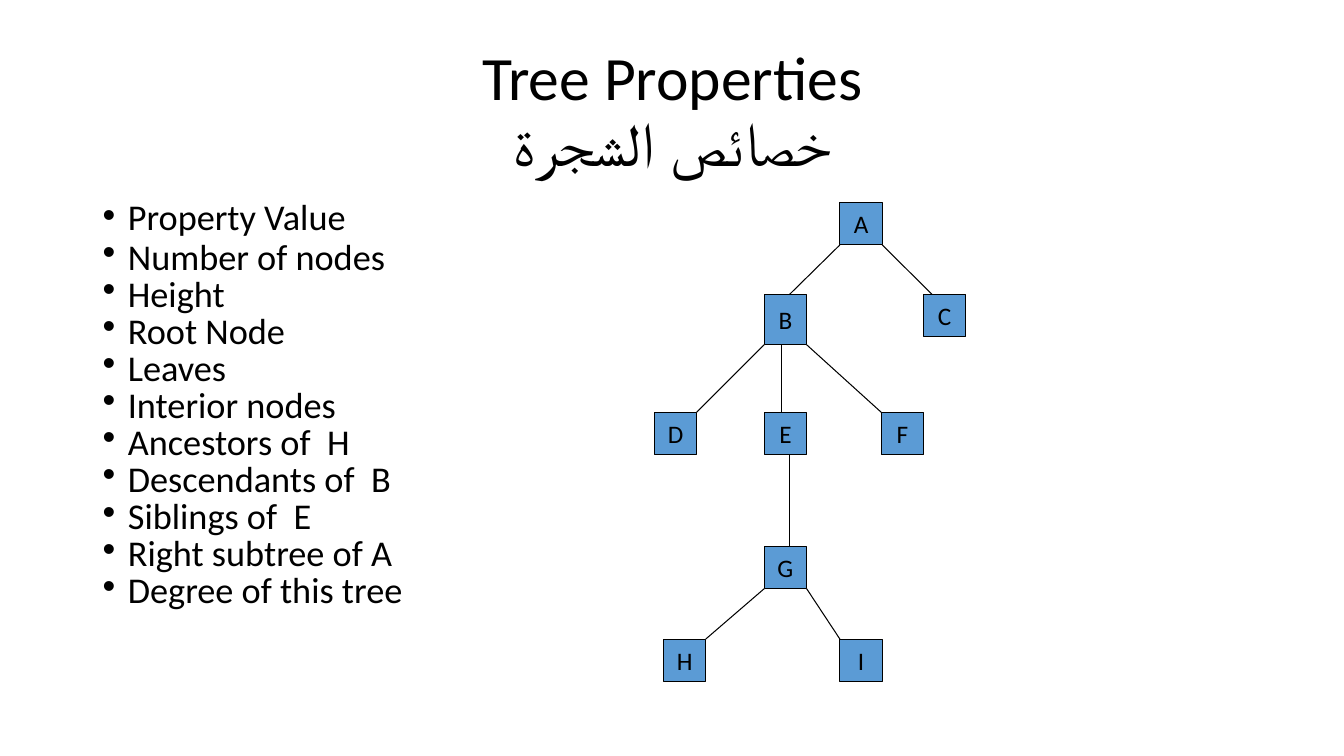
"""Build the tree properties slide."""
from dataclasses import dataclass

from lxml import etree
from pptx import Presentation
from pptx.dml.color import RGBColor
from pptx.enum import shapes, text
from pptx.oxml.ns import qn
from pptx.util import Inches, Pt

FONT = "Calibri"
BLACK = "000000"
NODE_BLUE = "5B9BD5"
SIDE = 0.42


@dataclass(frozen=True)
class Node:
    left: float
    top: float
    height: float = SIDE


@dataclass(frozen=True)
class Edge:
    parent: str
    child: str
    start: float
    end: float


NODES = {
    "A": Node(8.33, 2.01),
    "B": Node(7.58, 2.92, 0.5),
    "C": Node(9.16, 2.92),
    "D": Node(6.49, 4.09),
    "E": Node(7.58, 4.09),
    "F": Node(8.74, 4.09),
    "G": Node(7.58, 5.42),
    "H": Node(6.58, 6.34),
    "I": Node(8.33, 6.34),
}
EDGES = [
    Edge("A", "B", 0, 0.6),
    Edge("A", "C", 1, 0.2),
    Edge("B", "D", 0, 1),
    Edge("B", "E", 0.4, 0.4),
    Edge("B", "F", 1, 0),
    Edge("E", "G", 0.6, 0.6),
    Edge("G", "H", 0, 1),
    Edge("G", "I", 1, 0),
]
PROPERTIES = [
    "Property Value", "Number of nodes", "Height", "Root Node", "Leaves",
    "Interior nodes", "Ancestors of  H", "Descendants of  B",
    "Siblings of  E", "Right subtree of A", "Degree of this tree",
]


def color(value: str) -> RGBColor:
    return RGBColor.from_string(value)


def format_runs(paragraph, size: float) -> None:
    for run in paragraph.runs:
        run.font.name = FONT
        run.font.size = Pt(size)
        run.font.color.rgb = color(BLACK)


def add_bullet(paragraph) -> None:
    properties = paragraph._p.get_or_add_pPr()
    properties.set("marL", str(Inches(0.25)))
    properties.set("indent", str(Inches(-0.25)))
    etree.SubElement(properties, qn("a:buFont")).set("typeface", "Arial")
    etree.SubElement(properties, qn("a:buChar")).set("char", "•")


def draw_title(slide) -> None:
    title = slide.shapes.title
    title.left, title.top = Inches(0.92), Inches(0.4)
    title.width, title.height = Inches(11.5), Inches(1.45)
    frame = title.text_frame
    frame.text = "Tree Properties\vخصائص الشجرة"
    frame.auto_size = text.MSO_AUTO_SIZE.NONE
    frame.vertical_anchor = text.MSO_ANCHOR.MIDDLE
    heading = frame.paragraphs[0]
    heading.alignment = text.PP_ALIGN.CENTER
    heading.line_spacing = 0.9
    format_runs(heading, 44)


def draw_properties(slide) -> None:
    box = slide.shapes.add_textbox(Inches(0.92), Inches(2), Inches(11.5), Inches(4.76))
    frame = box.text_frame
    frame.word_wrap = True
    frame.text = "\n".join(PROPERTIES)
    for index, entry in enumerate(frame.paragraphs):
        entry.line_spacing = 0.4 if index else 0.7
        entry.space_before = Pt(14 if index else 13)
        add_bullet(entry)
        format_runs(entry, 25.9)


def draw_node(slide, label: str, node: Node) -> None:
    square = slide.shapes.add_shape(
        shapes.MSO_SHAPE.RECTANGLE, Inches(node.left), Inches(node.top),
        Inches(SIDE), Inches(node.height))
    square.shadow.inherit = False
    square.fill.solid()
    square.fill.fore_color.rgb = color(NODE_BLUE)
    square.line.color.rgb = color(BLACK)
    square.line.width = Pt(0.75)
    frame = square.text_frame
    frame.text = label
    frame.word_wrap = False
    frame.vertical_anchor = text.MSO_ANCHOR.MIDDLE
    frame.paragraphs[0].alignment = text.PP_ALIGN.CENTER
    format_runs(frame.paragraphs[0], 18)


def draw_edge(slide, edge: Edge) -> None:
    parent, child = NODES[edge.parent], NODES[edge.child]
    branch = slide.shapes.add_connector(
        shapes.MSO_CONNECTOR.STRAIGHT,
        Inches(parent.left + edge.start * SIDE), Inches(parent.top + parent.height),
        Inches(child.left + edge.end * SIDE), Inches(child.top))
    branch.line.color.rgb = color(BLACK)
    branch.line.width = Pt(0.75)
    etree.SubElement(branch._element.spPr, qn("a:effectLst"))


def main() -> None:
    deck = Presentation()
    deck.slide_width, deck.slide_height = Inches(13.33), Inches(7.5)
    slide = deck.slides.add_slide(deck.slide_layouts[5])
    draw_title(slide)
    draw_properties(slide)
    for label, node in NODES.items():
        draw_node(slide, label, node)
    for edge in EDGES:
        draw_edge(slide, edge)
    deck.save("out.pptx")


if __name__ == "__main__":
    main()
